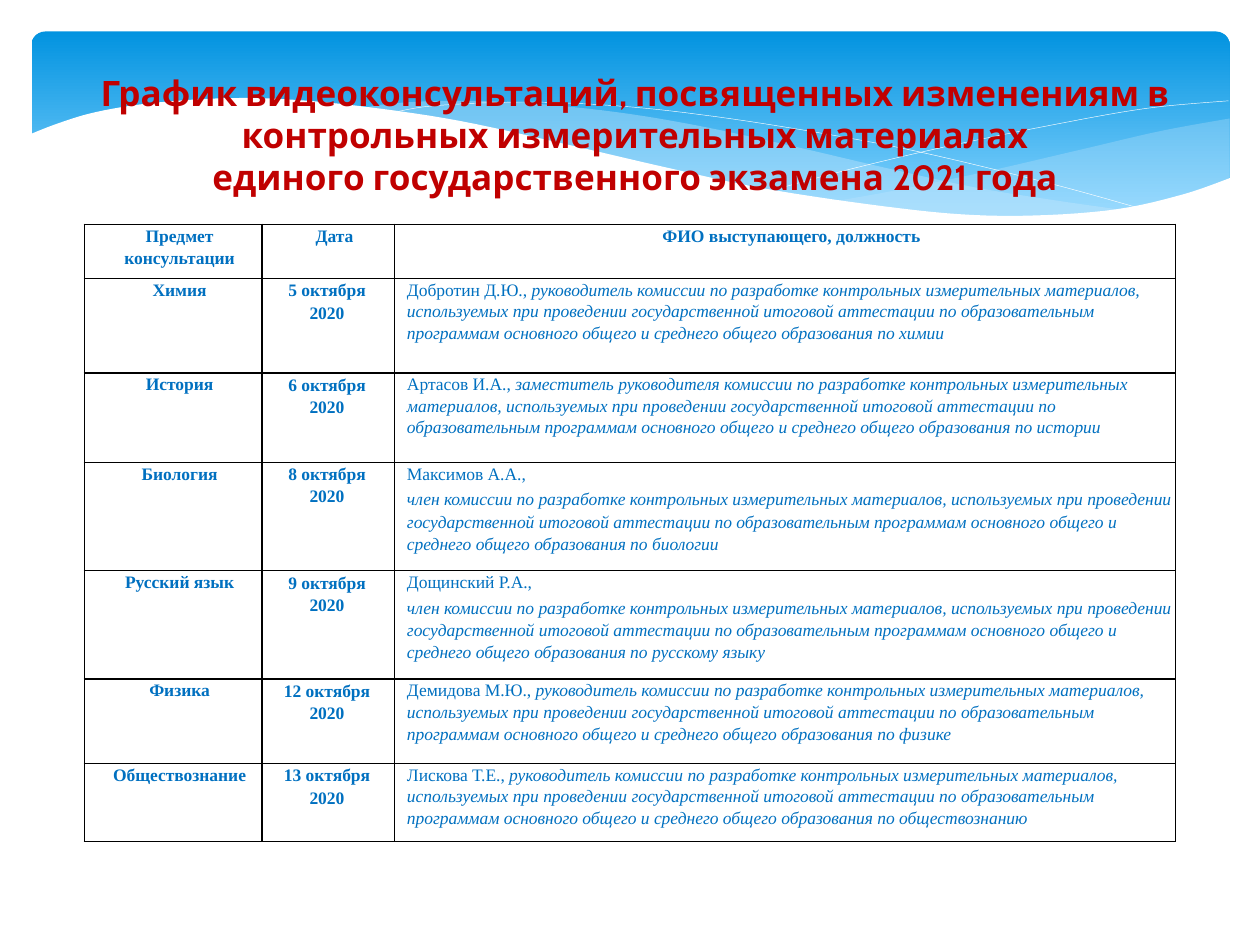
from lxml import etree
from pptx import Presentation
from pptx import util as u
from pptx.dml.color import RGBColor
from pptx.enum import shapes, text
from pptx.oxml.ns import qn

COLORS = {"sky": "0293E0", "pale": "83D3FE", "wave": "C6E7FC", "white": "FFFFFF",
          "title": "C00000", "body": "0070C0", "border": "000000"}
RGB = {name: RGBColor.from_string(value) for name, value in COLORS.items()}
SIDES = ("a:lnL", "a:lnR", "a:lnT", "a:lnB")

prs = Presentation()
prs.slide_width, prs.slide_height = u.Inches(10), u.Inches(7.5)
s = prs.slides.add_slide(prs.slide_layouts[6])
G = prs.slide_width // 100  # square grid: 100 columns by 75 rows


def smooth(points, steps=6):
    """Points of a Catmull-Rom curve through the given grid points."""
    ends = [points[0], *points, points[-1]]
    curve = [points[0]]
    for a, b, c, d in zip(ends, ends[1:], ends[2:], ends[3:]):
        for k in range(1, steps + 1):
            t = k / steps
            curve.append(tuple(
                (2 * q + (r - p) * t + (2 * p - 5 * q + 4 * r - v) * t ** 2
                 + (3 * q - p - 3 * r + v) * t ** 3) / 2
                for p, q, r, v in zip(a, b, c, d)))
    return curve


def outline(points, closed=True):
    """Freeform through grid points, without shadow."""
    dots = [(x * G, y * G) for x, y in points]
    builder = s.shapes.build_freeform(*dots[0])
    builder.add_line_segments(dots[1:], close=closed)
    sp = builder.convert_to_shape()
    sp.shadow.inherit = False
    return sp


# Blue banner
sp = s.shapes.add_shape(shapes.MSO_SHAPE.ROUNDED_RECTANGLE,
                        int(2.5 * G), int(2.5 * G), int(95.1 * G), int(15.6 * G))
sp.adjustments[0] = 0.07
sp.shadow.inherit = False
sp.line.fill.background()
sp.fill.gradient()
sp.fill.gradient_angle = 270
for stop, place, name in zip(sp.fill.gradient_stops, (0, 0.9), ("sky", "pale")):
    stop.position, stop.color.rgb = place, RGB[name]

# Translucent waves: upper edge, lower edge, opacity in percent
waves = [
    ([(97.6, 9.4), (92.1, 10.4), (86.1, 11.8), (77.9, 13.7), (70.6, 15.2), (66.1, 16)],
     [(66.1, 16), (73.2, 16.8), (79.2, 17.2), (84.4, 17.1), (89.7, 16.5), (94.2, 15.4),
      (97.6, 14.1)], 29),
    ([(89.3, 16.7), (83.7, 15.9), (77.5, 14.9), (70.6, 13.4), (62.9, 11.6), (55.5, 10),
      (48.9, 8.9), (42, 8.2), (36.1, 8), (31.3, 8.2), (28.6, 8.6)],
     [(28.6, 8.6), (34.2, 9.4), (40.4, 10.6), (49.1, 12.6), (56.6, 14.3), (63.4, 15.6),
      (69.5, 16.5), (76.1, 17.1), (81.8, 17.3), (85.7, 17.1), (89.3, 16.7)], 40),
]
for upper, lower, opacity in waves:
    sp = outline(smooth(upper) + smooth(lower))
    sp.line.fill.background()
    sp.fill.solid()
    sp.fill.fore_color.rgb = RGB["wave"]
    color = sp.fill._xPr.find(qn("a:solidFill"))[0]
    etree.SubElement(color, qn("a:alpha"), val=str(opacity * 1000))

# Thin white curves
for points in (
    [(30.9, 9), (34.4, 8.4), (41.6, 8.1), (48.9, 8.4), (55.6, 9.1), (63.6, 10.3),
     (72.7, 12), (83.1, 14.5), (90.7, 16.6)],
    [(61.3, 15.1), (67.2, 13.5), (74.8, 11.7), (83.6, 9.9), (91, 8.6), (97.5, 8)],
):
    sp = outline(smooth(points), closed=False)
    sp.fill.background()
    sp.line.color.rgb = RGB["white"]
    sp.line.width = u.Pt(0.25)

# White wave that cuts the banner
edge = [(97.7, 14.1), (94, 15.4), (88.7, 16.6), (82.3, 17.1), (76.1, 17), (68.8, 16.2),
        (60.3, 14.9), (52.9, 13.3), (44.7, 11.4), (36.5, 9.6), (29.2, 8.5), (23, 7.9),
        (17.7, 7.8), (11.9, 8.2), (7.6, 8.9), (4.6, 9.8), (2.3, 10.7)]
sp = outline(smooth(edge) + [(2.3, 22.4), (97.7, 22.4)])
sp.line.fill.background()
sp.fill.solid()
sp.fill.fore_color.rgb = RGB["white"]

# Schedule: each cell is a list of paragraphs, each paragraph a list of runs
duty = ("{} комиссии по разработке контрольных измерительных материалов, используемых при "
        "проведении государственной итоговой аттестации по образовательным программам "
        "основного общего и среднего общего образования по {}")
head, deputy, member = "руководитель", "заместитель руководителя", "член"
talks = [
    ("Химия", "5 октября", "Добротин Д.Ю.", head, "химии"),
    ("История", "6 октября", "Артасов И.А.", deputy, "истории"),
    ("Биология", "8 октября", "Максимов А.А.", member, "биологии"),
    ("Русский язык", "9 октября", "Дощинский Р.А.", member, "русскому языку"),
    ("Физика", "12 октября", "Демидова М.Ю.", head, "физике"),
    ("Обществознание", "13 октября", "Лискова Т.Е.", head, "обществознанию"),
]
rows = [[[["Предмет консультации"]], [["Дата"]], [["ФИО выступающего, должность"]]]]
for subject, day, speaker, role, topic in talks:
    post = duty.format(role, topic)
    speech = [[speaker + ","], ["", post]] if role == member else [[speaker + ", ", post]]
    rows.append([[[subject]], [[day + " 2020"]], speech])

widths = [14.1, 10.5, 62]
heights = [4.3, 7.5, 7.1, 8.6, 8.6, 6.7, 6.2]
frame = s.shapes.add_table(len(rows), len(widths), int(6.7 * G), int(17.8 * G),
                           int(sum(widths) * G), int(sum(heights) * G))
table = frame.table
table.first_row = table.horz_banding = False
for column, width in zip(table.columns, widths):
    column.width = int(width * G)
for row, height in zip(table.rows, heights):
    row.height = int(height * G)

for i, row in enumerate(rows):
    for j, paragraphs in enumerate(row):
        cell = table.cell(i, j)
        cell.margin_left = cell.margin_right = cell.margin_top = cell.margin_bottom = 0
        is_date, is_speech = i > 0 and j == 1, i > 0 and j == 2
        if is_date:
            cell.margin_right = int(1.2 * G)
        cell.fill.background()
        for k, side in enumerate(SIDES):
            ln = etree.Element(qn(side), w=str(u.Pt(1)))
            fill = etree.SubElement(ln, qn("a:solidFill"))
            etree.SubElement(fill, qn("a:srgbClr"), val=COLORS["border"])
            cell._tc.tcPr.insert(k, ln)
        tf = cell.text_frame
        for n, parts in enumerate(paragraphs):
            p = tf.add_paragraph() if n else tf.paragraphs[0]
            p.alignment = text.PP_ALIGN.LEFT if is_speech else text.PP_ALIGN.CENTER
            p.line_spacing = 1.15 if is_date or n or i + j == 0 else 1.12
            if len(paragraphs) > 1 and n == 0:
                p.space_after = u.Pt(2)
            p._p.get_or_add_pPr().set("marL", str(G))
            for m, part in enumerate(parts):
                if not part:
                    continue
                r = p.add_run()
                r.text = part
                r.font.name, r.font.size = "Times New Roman", u.Pt(10)
                r.font.color.rgb = RGB["body"]
                r.font.bold, r.font.italic = not is_speech, m == 1

# Title
sp = s.shapes.add_textbox(int(5.1 * G), int(4.9 * G), int(90.6 * G), int(14.1 * G))
tf = sp.text_frame
tf.word_wrap = True
tf.vertical_anchor = text.MSO_ANCHOR.MIDDLE
tf.margin_bottom = int(3.1 * G)
p = tf.paragraphs[0]
p.text = ("График видеоконсультаций, посвященных изменениям в контрольных измерительных "
          "материалах\vединого государственного экзамена 2021 года")
p.alignment = text.PP_ALIGN.CENTER
for r in p.runs:
    r.font.name, r.font.size, r.font.bold = "Cabin", u.Pt(20), True
    r.font.color.rgb = RGB["title"]

prs.save("out.pptx")
